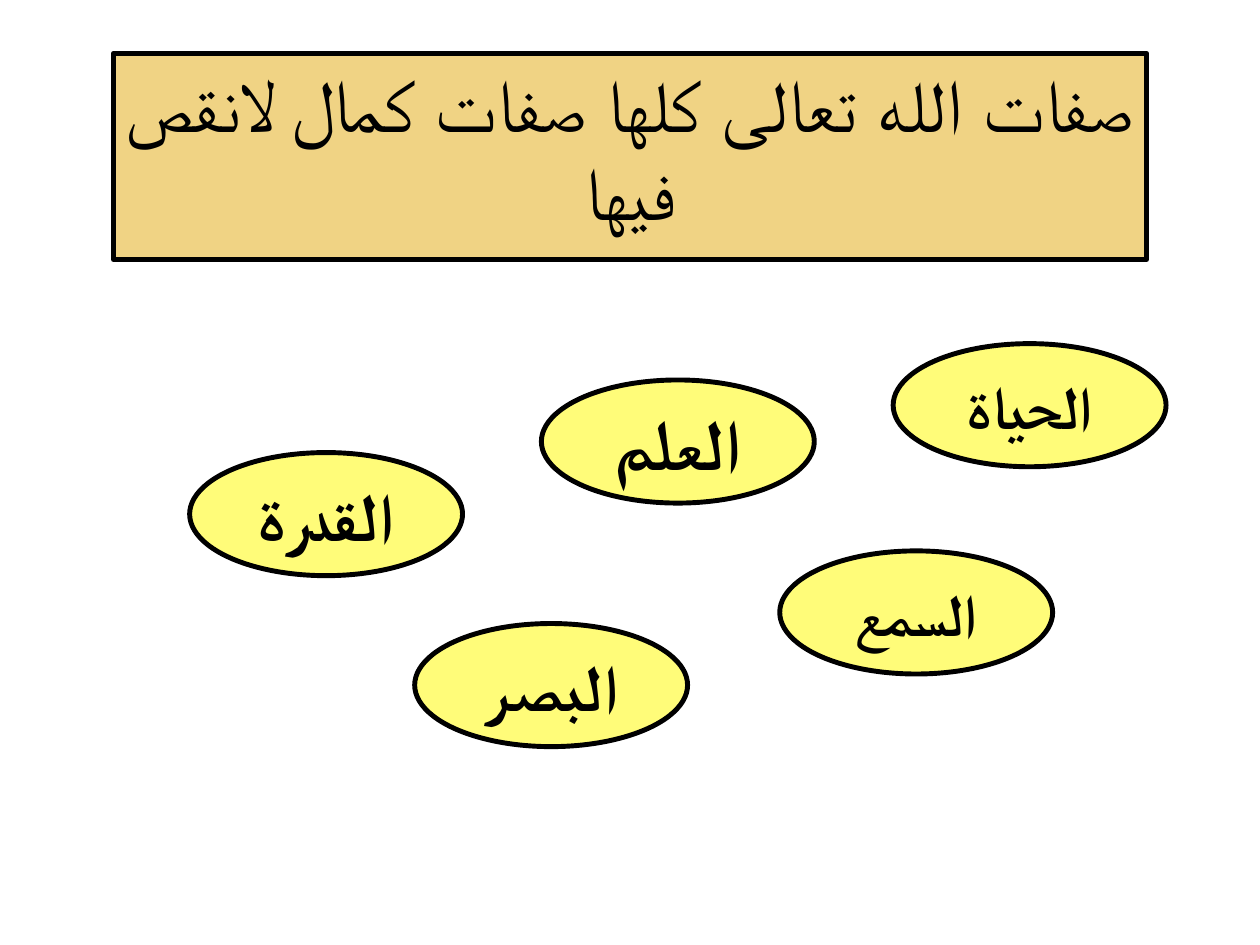
from lxml import etree
from pptx import Presentation
from pptx.dml.color import RGBColor
from pptx.enum.shapes import MSO_SHAPE
from pptx.enum.text import MSO_ANCHOR, MSO_AUTO_SIZE, PP_ALIGN
from pptx.oxml.ns import qn
from pptx.util import Inches, Pt

OVAL = MSO_SHAPE.OVAL
TOP, MIDDLE = MSO_ANCHOR.TOP, MSO_ANCHOR.MIDDLE
GROW, FIXED = MSO_AUTO_SIZE.SHAPE_TO_FIT_TEXT, MSO_AUTO_SIZE.NONE
CENTER = PP_ALIGN.CENTER

INK, SAND, YELLOW = "000000", "F0D384", "FFFC79"
OVAL_SIZE = (3.08, 1.39)
TRAITS = [
    ("الحياة", 10.08, 3.88, 49),
    ("السمع", 8.8, 6.22, 48),
    ("القدرة", 2.14, 5.11, 55),
    ("العلم", 6.11, 4.29, 58),
    ("البصر", 4.68, 7.04, 53),
]


def color(value):
    return RGBColor.from_string(value)


def apply(target, values):
    for name, value in values.items():
        setattr(target, name, value)


class Board:
    border = 4
    inset = 0.06

    def __init__(self, slide):
        self.slide = slide

    def paint(self, shape, fill):
        shape.fill.solid()
        shape.fill.fore_color.rgb = color(fill)
        shape.line.color.rgb = color(INK)
        shape.line.width = Pt(self.border)

    def label(self, shape, text, size, font, bold, anchor, fit):
        """Set centred right-to-left text in Latin and complex-script fonts."""
        frame = shape.text_frame
        gap = Inches(self.inset)
        apply(frame, {
            "margin_left": gap, "margin_right": gap,
            "margin_top": gap, "margin_bottom": gap,
            "word_wrap": True, "vertical_anchor": anchor, "auto_size": fit,
        })
        para = frame.paragraphs[0]
        para.alignment = CENTER
        para._p.get_or_add_pPr().set("rtl", "1")
        run = para.add_run()
        run.text = text
        apply(run.font, {"name": font, "size": Pt(size), "bold": bold})
        run.font.color.rgb = color(INK)
        etree.SubElement(run._r.get_or_add_rPr(), qn("a:cs"), typeface=font)

    def title(self, text, left, top, width, height):
        shape = self.slide.shapes.title
        apply(shape, {
            "left": Inches(left), "top": Inches(top),
            "width": Inches(width), "height": Inches(height),
        })
        self.paint(shape, SAND)
        self.label(shape, text, 60, "Arial", False, TOP, GROW)

    def oval(self, text, left, top, size):
        width, height = OVAL_SIZE
        shape = self.slide.shapes.add_shape(
            OVAL, Inches(left), Inches(top), Inches(width), Inches(height))
        shape.shadow.inherit = False
        self.paint(shape, YELLOW)
        self.label(shape, text, size, "Roboto", True, MIDDLE, FIXED)


def main():
    deck = Presentation()
    apply(deck, {"slide_width": Inches(14.22), "slide_height": Inches(10.67)})
    board = Board(deck.slides.add_slide(deck.slide_layouts[5]))
    board.title("صفات الله تعالى كلها صفات كمال لانقص فيها",
                1.28, 0.6, 11.66, 2.33)
    for text, left, top, size in TRAITS:
        board.oval(text, left, top, size)
    deck.save("out.pptx")


if __name__ == "__main__":
    main()
